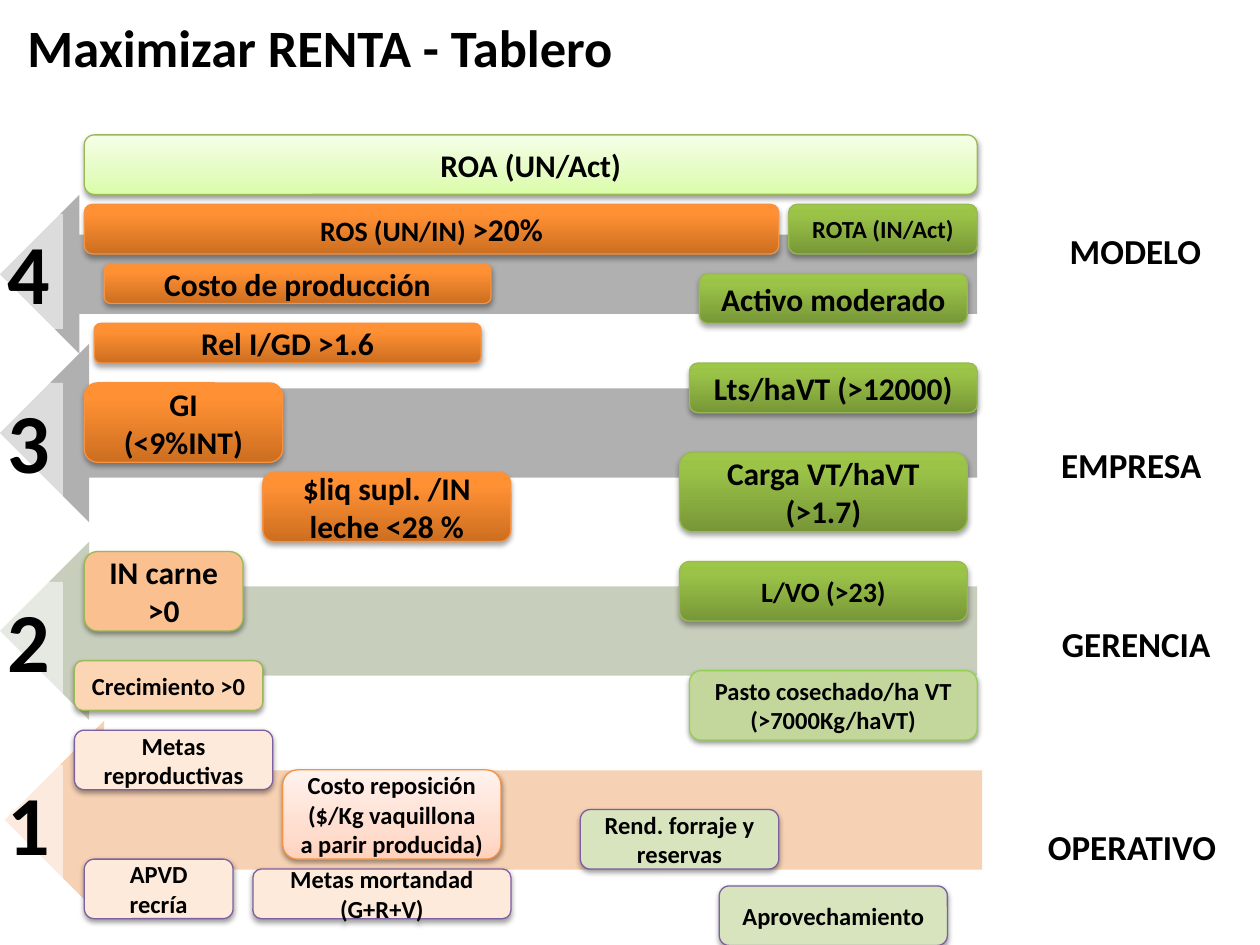
from lxml import etree
from pptx import Presentation
from pptx import util as u
from pptx.dml.color import RGBColor
from pptx.enum import shapes, text
from pptx.oxml.ns import qn

Cm, Pt = u.Cm, u.Pt
KIND = shapes.MSO_SHAPE

# Card styles: fill (one colour or gradient stops), line, shadow alpha %, shadow distance
STYLES = {
    "orange": ([(0, "CC6E20"), (80, "FF9034"), (100, "FF9136")], "F69240", 35, 1.8),
    "green": ([(0, "779737"), (80, "9BC348"), (100, "9DC746")], "98B955", 35, 1.8),
    "lime": ([(0, "DAFDA7"), (35, "E4FCC2"), (100, "F5FFE7")], "98B955", 38, 1.6),
    "blush": ([(0, "FFD2BD"), (35, "FFDED0"), (100, "FFF2ED")], "F69240", 38, 1.6),
    "peach": ("FAC090", "98B955", 38, 1.6),
    "sand": ("FCD5B5", "98B955", 38, 1.6),
    "cream": ("FDEADA", "7D60A0", 38, 1.6),
    "grass": ("C3D69B", "92D050", 38, 1.6),
    "sage": ("D7E4BD", "7D60A0", 38, 1.6),
}

# Cards: x, y, width, height within the board (cm), style, size, text
CARDS = [
    (0.2, 0, 18, 1.2, "lime", 18, "ROA (UN/Act)"),
    (0.2, 1.4, 14, 1, "orange", 16, [("ROS (UN/IN) ", 16), (">20%", 18)]),
    (14.4, 1.4, 3.8, 1, "green", 14, "ROTA (IN/Act)"),
    (0.6, 2.6, 7.8, 0.8, "orange", 18, "Costo de producción"),
    (12.6, 2.8, 5.4, 1, "green", 18, "Activo moderado"),
    (0.4, 3.8, 7.8, 0.8, "orange", 18, "Rel I/GD >1.6"),
    (12.4, 4.6, 5.8, 1, "green", 18, "Lts/haVT (>12000)"),
    (0.2, 5, 4, 1.6, "orange", 18, "GI\n(<9%INT)"),
    (12.2, 6.4, 5.8, 1.6, "green", 18, "Carga VT/haVT\n(>1.7)"),
    (3.8, 6.8, 5, 1.4, "orange", 18, "$liq supl. /IN leche <28 %"),
    (0.2, 8.4, 3.2, 1.6, "peach", 18, "IN carne >0"),
    (12.2, 8.6, 5.8, 1.2, "green", 16, "L/VO (>23)"),
    (0, 10.6, 3.8, 1, "sand", 14, "Crecimiento >0"),
    (12.4, 10.8, 5.8, 1.4, "grass", 14, "Pasto cosechado/ha VT (>7000Kg/haVT)"),
    (0, 12, 4, 1.2, "cream", 14, "Metas reproductivas"),
    (4.2, 12.8, 4.4, 1.8, "blush", 14,
     "Costo reposición ($/Kg vaquillona a parir producida)"),
    (10.2, 13.6, 4, 1.2, "sage", 14, "Rend. forraje y reservas"),
    (0.2, 14.6, 3, 1.2, "cream", 14, "APVD recría"),
    (3.6, 14.8, 5.2, 1, "cream", 14, "Metas mortandad (G+R+V)"),
    (13, 15.14, 4.6, 1.2, "sage", 14, "Aprovechamiento"),
]

# Bands: arrow x, y, height, colour; digit, its y; label, its x, y, width (offsets in band)
BANDS = [
    (0, 3.93, 3.2, "000000", "4", 0.39, "MODELO", 21.3, 0.57, 3.18),
    (0, 6.93, 3.6, "000000", "3", 0.79, "EMPRESA", 21.13, 1.88, 3.35),
    (0, 10.92, 3.6, "4F6228", "2", 0.81, "GERENCIA", 19.69, 1.5, 6.43),
    (0.1, 14.53, 4, "E46C0A", "1", 0.89, "OPERATIVO", 20.75, 1.98, 3.94),
]


def rgb(code):
    return RGBColor.from_string(code)


def write(shape, words, size=18, align="LEFT", anchor="TOP", wrap=True):
    """Fill a shape with text; words is a string or a list of (text, size) runs."""
    frame = shape.text_frame
    frame.word_wrap = wrap
    frame.vertical_anchor = getattr(text.MSO_ANCHOR, anchor)
    lines = [words]
    if isinstance(words, str):
        lines = [[(line, size)] for line in words.split("\n")]
    for i, runs in enumerate(lines):
        para = frame.add_paragraph() if i else frame.paragraphs[0]
        para.alignment = getattr(text.PP_ALIGN, align)
        for part, pts in runs:
            run = para.add_run()
            run.text = part
            font = run.font
            font.name, font.size, font.bold = "Calibri", Pt(pts), True
            font.color.rgb = rgb("000000")


def paint(shape, fill, alpha=100):
    """Fill with one colour, or with stops running from bottom to top."""
    if isinstance(fill, str):
        shape.fill.solid()
        shape.fill.fore_color.rgb = rgb(fill)
        if alpha < 100:
            tint = shape._element.spPr.find(".//" + qn("a:srgbClr"))
            etree.SubElement(tint, qn("a:alpha"), val=str(alpha * 1000))
        return
    shape.fill.gradient()
    shape.fill.gradient_angle = 90
    stops = shape._element.spPr.find(".//" + qn("a:gsLst"))
    for old in list(stops):
        stops.remove(old)
    for pos, code in fill:
        stop = etree.SubElement(stops, qn("a:gs"), pos=str(pos * 1000))
        etree.SubElement(stop, qn("a:srgbClr"), val=code)


def block(slide, kind, x, y, w, h, fill, alpha=100):
    shape = slide.shapes.add_shape(kind, Cm(x), Cm(y), Cm(w), Cm(h))
    shape.shadow.inherit = False
    shape.line.fill.background()
    paint(shape, fill, alpha)
    return shape


def shade(shape, alpha, dist):
    """Soft shadow straight below."""
    effects = shape._element.spPr.find(qn("a:effectLst"))
    drop = etree.SubElement(effects, qn("a:outerShdw"), blurRad=str(Pt(3.1)),
                            dist=str(Pt(dist)), dir="5400000", rotWithShape="0")
    tint = etree.SubElement(drop, qn("a:srgbClr"), val="000000")
    etree.SubElement(tint, qn("a:alpha"), val=str(alpha * 1000))


def head(slide, x, y, w, h):
    title = slide.shapes.title
    title.left, title.top, title.width, title.height = Cm(x), Cm(y), Cm(w), Cm(h)
    write(title, "Maximizar RENTA - Tablero", size=30, wrap=False)


def band(slide, x, y, h, tint, digit, drop, label, dx, dy, w):
    """Level arrow with its number and its name on the right."""
    block(slide, KIND.LEFT_ARROW, x, y, 19.7, h, tint, 31)
    plate = block(slide, KIND.RECTANGLE, -0.1, y + drop, 1.37, 2.31, "FFFFFF", 56)
    write(plate, digit, size=48, wrap=False)
    box = slide.shapes.add_textbox(Cm(x + dx), Cm(y + dy), Cm(w), Cm(1.12))
    write(box, label, size=20, align="CENTER")


def board(slide, x, y):
    """Indicator cards."""
    for dx, dy, w, h, style, size, words in CARDS:
        fill, edge, alpha, dist = STYLES[style]
        card = block(slide, KIND.ROUNDED_RECTANGLE, x + dx, y + dy, w, h, fill)
        card.line.color.rgb = rgb(edge)
        card.line.width = Pt(0.75)
        shade(card, alpha, dist)
        write(card, words, size=size, align="CENTER", anchor="MIDDLE")


def main():
    deck = Presentation()
    deck.slide_width, deck.slide_height = Cm(25.4), Cm(19.05)
    slide = deck.slides.add_slide(deck.slide_layouts[5])
    head(slide, 0.3, 0.18, 12.42, 1.55)
    for row in BANDS:
        band(slide, *row)
    board(slide, 1.5, 2.72)
    deck.save("out.pptx")


if __name__ == "__main__":
    main()
